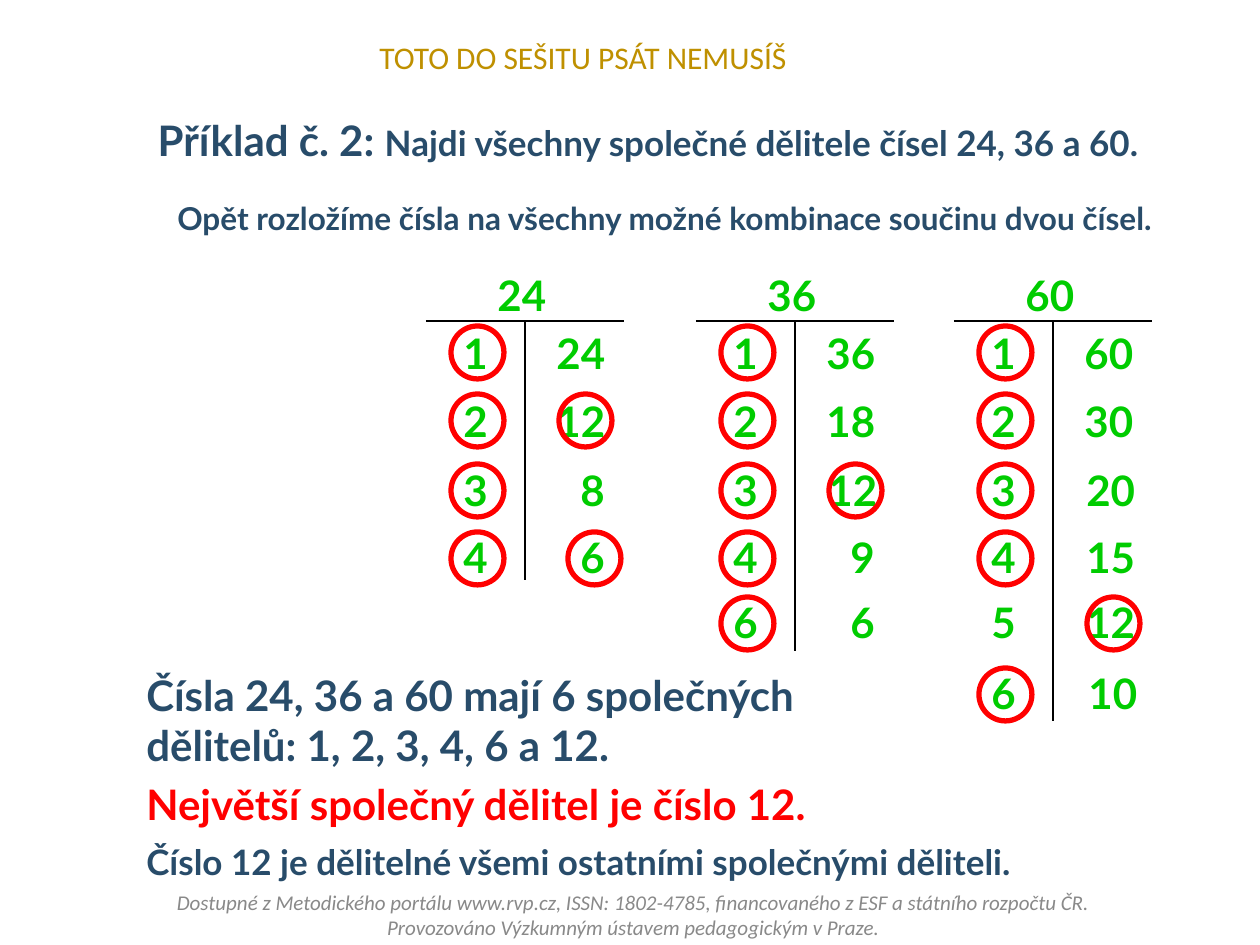
from dataclasses import dataclass

import lxml.etree
import pptx
import pptx.dml.color
import pptx.enum.shapes
import pptx.enum.text
import pptx.oxml.ns
import pptx.util

PX = 914400 / 126
NAVY, GREEN, RED, GOLD, GRAY, BLACK = "284C6A", "00CC00", "FF0000", "BF9000", "898989", "000000"
ROW_TOPS = [318, 386, 455, 522, 587, 658]
RING_TOPS = [326, 394, 464, 532, 597, 668]
RING_SIZE = 53
LEFT_NUMBER, RIGHT_NUMBER, UNITS_SHIFT = 25, 118, 24


@dataclass
class DivisorTable:
    number: int
    left: int
    bottom: int
    pairs: list[tuple[int, int]]
    right_shifts: list[int]


TABLES = [
    DivisorTable(24, 426, 580, [(1, 24), (2, 12), (3, 8), (4, 6)], [0, 0, 0, 0]),
    DivisorTable(36, 696, 651, [(1, 36), (2, 18), (3, 12), (4, 9), (6, 6)], [0, 0, 2, 0, 0]),
    DivisorTable(60, 954, 721, [(1, 60), (2, 30), (3, 20), (4, 15), (5, 12), (6, 10)],
                 [0, 0, 2, 2, 2, 4]),
]
COMMON_DIVISORS = set.intersection(*({d for pair in t.pairs for d in pair} for t in TABLES))


def px(length: int) -> pptx.util.Emu:
    return pptx.util.Emu(round(length * PX))


def color(value: str) -> pptx.dml.color.RGBColor:
    return pptx.dml.color.RGBColor.from_string(value)


def write(shape, *runs: tuple[str, int], fill: str = NAVY, font: str = "Lato",
          bold: bool = True, italic: bool = False, center: bool = False, wrap: bool = True) -> None:
    """Fill a shape with one paragraph of (text, point size) runs."""
    frame = shape.text_frame
    frame.auto_size = pptx.enum.text.MSO_AUTO_SIZE.NONE
    frame.word_wrap = wrap
    frame.vertical_anchor = pptx.enum.text.MSO_ANCHOR.MIDDLE
    paragraph = frame.paragraphs[0]
    alignment = pptx.enum.text.PP_ALIGN
    paragraph.alignment = alignment.CENTER if center else alignment.LEFT
    for text, size in runs:
        run = paragraph.add_run()
        run.text = text
        run.font.name = font
        run.font.size = pptx.util.Pt(size)
        run.font.bold = bold
        run.font.italic = italic
        run.font.color.rgb = color(fill)


def add_text(slide, text: str, left: int, top: int, width: int, height: int,
             size: int = 24, **text_format) -> None:
    box = slide.shapes.add_textbox(px(left), px(top), px(width), px(height))
    write(box, (text, size), **text_format)


def add_rule(shapes, x1: int, y1: int, x2: int, y2: int) -> None:
    line = shapes.add_connector(pptx.enum.shapes.MSO_CONNECTOR.STRAIGHT,
                                px(x1), px(y1), px(x2), px(y2))
    line.line.color.rgb = color(BLACK)
    line.line.width = pptx.util.Pt(0.75)
    lxml.etree.SubElement(line._element.spPr, pptx.oxml.ns.qn("a:effectLst"))


def add_ring(slide, left: int, top: int) -> None:
    ring = slide.shapes.add_shape(pptx.enum.shapes.MSO_SHAPE.OVAL,
                                  px(left), px(top), px(RING_SIZE), px(RING_SIZE))
    ring.shadow.inherit = False
    ring.fill.background()
    ring.line.color.rgb = color(RED)
    ring.line.width = pptx.util.Pt(3)


def add_divisor_table(slide, table: DivisorTable) -> None:
    add_text(slide, str(table.number), table.left + 59, 260, 96, 69, fill=GREEN)
    rules = slide.shapes.add_group_shape().shapes
    add_rule(rules, table.left, 321, table.left + 198, 321)
    add_rule(rules, table.left + 99, 321, table.left + 99, table.bottom)

    circled = set()
    for row, (small, large) in enumerate(table.pairs):
        right = RIGHT_NUMBER + table.right_shifts[row] + (UNITS_SHIFT if large < 10 else 0)
        ring_right = 142 if large < 10 else 133
        for divisor, offset, ring in ((small, LEFT_NUMBER, 25), (large, right, ring_right)):
            add_text(slide, str(divisor), table.left + offset, ROW_TOPS[row], 79, 69, fill=GREEN)
            if divisor in COMMON_DIVISORS - circled:
                circled.add(divisor)
                add_ring(slide, table.left + ring, RING_TOPS[row])


def main() -> None:
    presentation = pptx.Presentation()
    presentation.slide_width, presentation.slide_height = px(1260), px(945)
    slide = presentation.slides.add_slide(presentation.slide_layouts[5])

    title = slide.shapes.title
    title.left, title.top, title.width, title.height = px(145), px(100), px(1152), px(79)
    write(title, ("Příklad č. 2: ", 24),
          ("Najdi všechny společné dělitele čísel 24, 36 a 60.", 20))

    add_text(slide, "TOTO DO SEŠITU PSÁT NEMUSÍŠ", 367, 32, 436, 50, size=18,
             fill=GOLD, font="Calibri", bold=False, wrap=False)
    add_text(slide, "Opět rozložíme čísla na všechny možné kombinace součinu dvou čísel.",
             165, 198, 1131, 40, size=18)
    for table in TABLES:
        add_divisor_table(slide, table)

    add_text(slide, "Čísla 24, 36 a 60 mají 6 společných dělitelů: 1, 2, 3, 4, 6 a 12.",
             134, 680, 804, 79)
    add_text(slide, "Největší společný dělitel je číslo 12.", 134, 764, 1081, 79, fill=RED)
    add_text(slide, "Číslo 12 je dělitelné všemi ostatními společnými děliteli.",
             134, 822, 1081, 79, size=20)
    add_text(slide, "Dostupné z Metodického portálu www.rvp.cz, ISSN: 1802-4785, "
             "financovaného z ESF a státního rozpočtu ČR. "
             "Provozováno Výzkumným ústavem pedagogickým v Praze.",
             112, 890, 1043, 50, size=12, fill=GRAY, font="Calibri",
             bold=False, italic=True, center=True)
    presentation.save("out.pptx")


if __name__ == "__main__":
    main()
